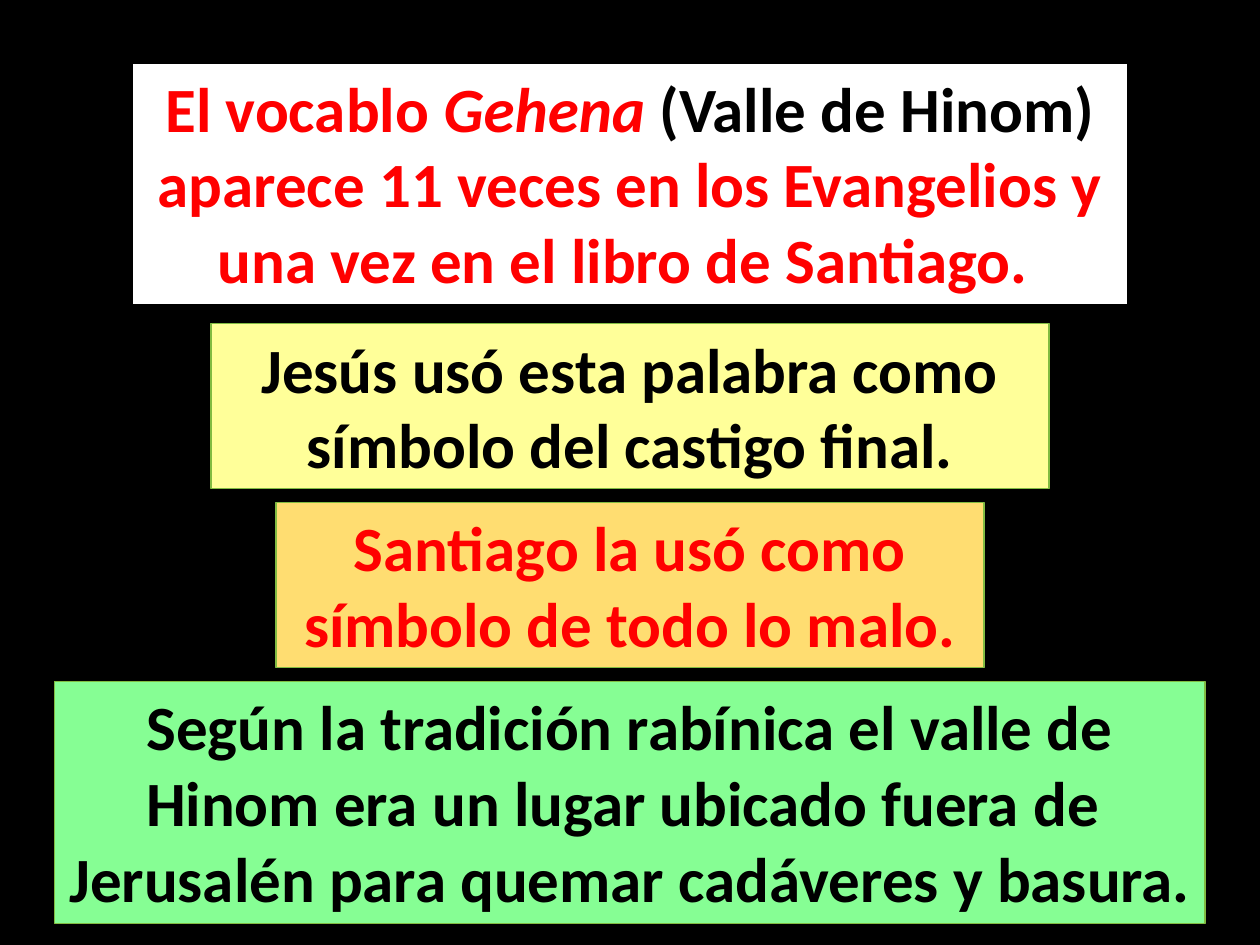
from dataclasses import dataclass
from typing import Any

from lxml import etree
from pptx import Presentation
from pptx import util as u
from pptx.dml.color import RGBColor
from pptx.enum import shapes, text
from pptx.oxml import ns

BLACK, RED, LEAF = "000000", "FF0000", "81BB42"


def rgb(value):
    return RGBColor.from_string(value)


def add_run(paragraph, words, *, font, size, color, italic=False):
    """Add bold text with an outline in its own colour."""
    run = paragraph.add_run()
    run.text = words
    run.font.name = font
    run.font.size = u.Pt(size)
    run.font.bold = True
    run.font.italic = italic
    run.font.color.rgb = rgb(color)
    outline = etree.Element(ns.qn("a:ln"), w=str(u.Pt(0.75)))
    fill = etree.SubElement(outline, ns.qn("a:solidFill"))
    etree.SubElement(fill, ns.qn("a:srgbClr"), val=color)
    run.font._element.insert(0, outline)


@dataclass
class Deck:
    slide: Any
    font: str = "Calibri"
    size: int = 36

    def background(self, color):
        fill = self.slide.background.fill
        fill.solid()
        fill.fore_color.rgb = rgb(color)

    def panel(self, top, width, height, fill, paragraphs, *,
              border=LEAF, weight=0.75):
        """Add a box centred on the slide; each paragraph lists (words, format) runs."""
        box = self.slide.shapes.add_shape(
            shapes.MSO_SHAPE.RECTANGLE, u.Inches((10 - width) / 2),
            u.Inches(top), u.Inches(width), u.Inches(height))
        box.shadow.inherit = False
        box.fill.solid()
        box.fill.fore_color.rgb = rgb(fill)
        box.line.color.rgb = rgb(border)
        box.line.width = u.Pt(weight)
        frame = box.text_frame
        frame.word_wrap = True
        frame.auto_size = text.MSO_AUTO_SIZE.SHAPE_TO_FIT_TEXT
        frame.vertical_anchor = text.MSO_ANCHOR.TOP
        for index, runs in enumerate(paragraphs):
            paragraph = frame.add_paragraph() if index else frame.paragraphs[0]
            paragraph.alignment = text.PP_ALIGN.CENTER
            for words, style in runs:
                add_run(paragraph, words, font=self.font, size=self.size, **style)


def main():
    prs = Presentation()
    prs.slide_width, prs.slide_height = u.Inches(10), u.Inches(7.5)
    deck = Deck(prs.slides.add_slide(prs.slide_layouts[6]))
    deck.background(BLACK)

    black, red = {"color": BLACK}, {"color": RED}
    two_lines, three_lines = 1.31, 1.92
    deck.panel(0.5, 7.91, three_lines, "FFFFFF", [[
        ("El vocablo ", red),
        ("Gehena ", {"color": RED, "italic": True}),
        ("(Valle de Hinom) ", black),
        ("aparece 11 veces en los Evangelios y una vez en el libro de Santiago. ", red),
    ]], border=BLACK, weight=1)
    deck.panel(2.57, 6.65, two_lines, "FFFF99", [
        [("Jesús usó esta palabra como símbolo del castigo final.", black)]])
    deck.panel(3.99, 5.62, two_lines, "FFDD71", [
        [("Santiago la usó como símbolo de todo lo malo.", red)]])
    deck.panel(5.41, 9.13, three_lines, "86FE94", [
        [("Según la tradición rabínica el valle de Hinom era un lugar ubicado fuera de ", black)],
        [("Jerusalén para quemar cadáveres y basura.", black)]])
    prs.save("out.pptx")


if __name__ == "__main__":
    main()
